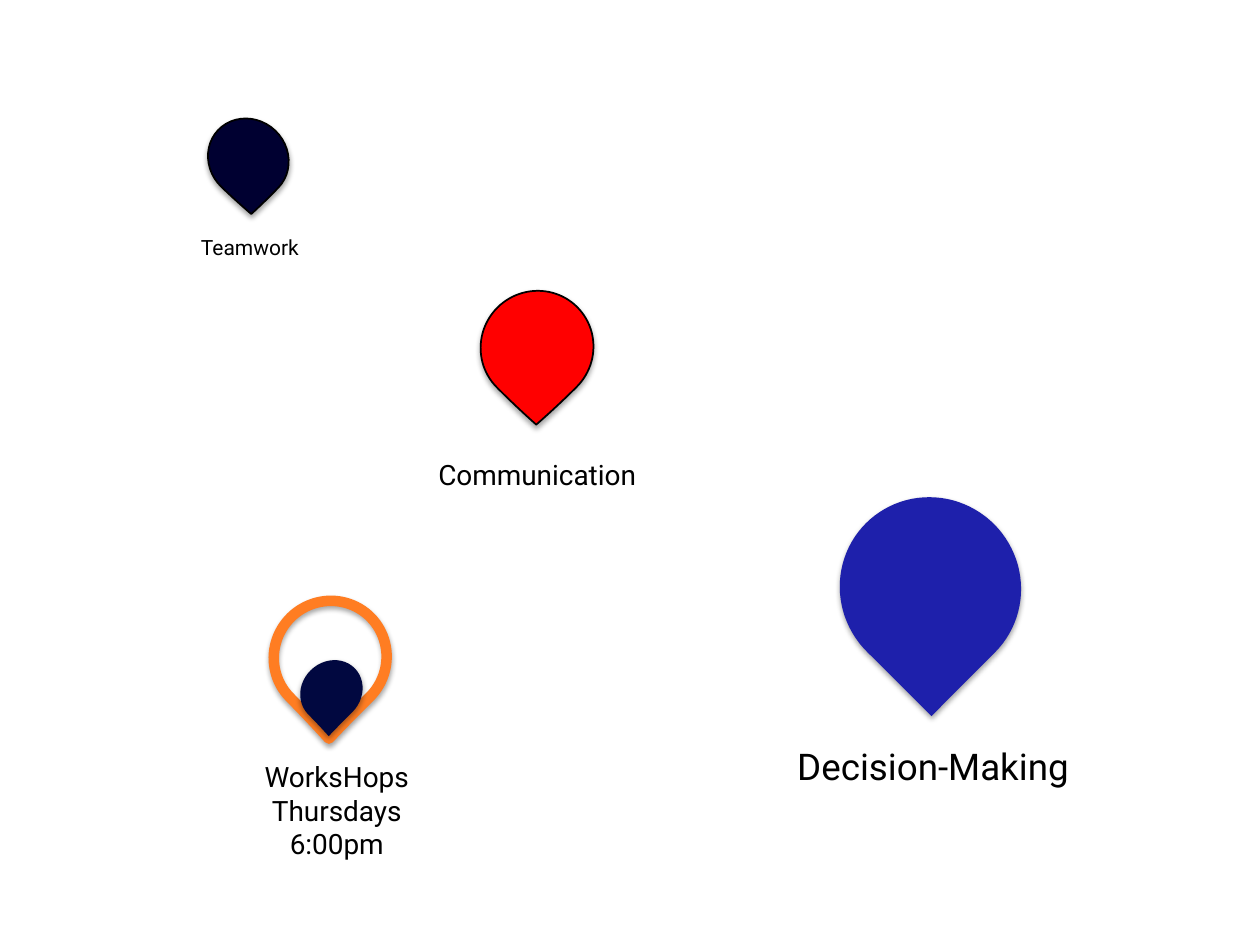
"""Build a slide of map-pin markers, each with a caption below it."""
from dataclasses import dataclass
from typing import Any, Optional

import pptx
import pptx.dml.color
import pptx.enum.shapes
import pptx.enum.text
import pptx.oxml
import pptx.oxml.ns
import pptx.util

Cm = pptx.util.Cm
Pt = pptx.util.Pt
RGBColor = pptx.dml.color.RGBColor

BLACK = RGBColor(0x00, 0x00, 0x00)
RED = RGBColor(0xFF, 0x00, 0x00)
BLUE = RGBColor(0x1E, 0x20, 0xAB)
MIDNIGHT = RGBColor(0x00, 0x00, 0x31)
NAVY = RGBColor(0x01, 0x08, 0x40)
ORANGE = RGBColor(0xFF, 0x7D, 0x22)

CAPTION_WIDTH = 11.86
SHADOW_XML = (
    f'<a:outerShdw {pptx.oxml.ns.nsdecls("a")} blurRad="{Pt(3.1)}" dist="{Pt(1.8)}" '
    'dir="5400000" algn="tl" rotWithShape="0"><a:srgbClr val="000000">'
    '<a:alpha val="35000"/></a:srgbClr></a:outerShdw>'
)


@dataclass(frozen=True)
class Pin:
    left: float
    top: float
    width: float
    height: float
    rotation: float
    point: float = 1.0
    fill: Optional[RGBColor] = None
    outline: Optional[RGBColor] = None
    outline_width: float = 1


@dataclass(frozen=True)
class Caption:
    text: str
    left: float
    top: float
    height: float
    size: float


TOPIC_PINS = (
    Pin(9.68, 5.87, 2.29, 2.26, 135.2, 0.97, RED, BLACK),
    Pin(16.94, 10.01, 3.63, 3.68, 134.9, fill=BLUE),
    Pin(4.22, 2.36, 1.57, 1.68, 133.9, 0.97, MIDNIGHT, BLACK),
)
WORKSHOP_PINS = (
    Pin(5.51, 12.12, 2.29, 2.26, 135.5, 1.02, outline=ORANGE, outline_width=6),
    Pin(6.02, 13.34, 1.32, 1.19, 135.5, 1.02, NAVY),
)
TOPIC_CAPTIONS = (
    Caption("Decision-Making", 12.88, 14.86, 1.14, 21),
    Caption("Communication", 4.9, 9.09, 0.94, 16),
    Caption("Teamwork", -0.89, 4.6, 0.76, 12),
)
WORKSHOP_CAPTION = Caption("WorksHops\nThursdays\n6:00pm", 0.86, 15.19, 2.39, 16)


def draw_pin(shapes: Any, pin: Pin) -> None:
    """Draw a teardrop turned point down, with a soft shadow below."""
    drop = shapes.add_shape(
        pptx.enum.shapes.MSO_SHAPE.TEAR,
        Cm(pin.left), Cm(pin.top), Cm(pin.width), Cm(pin.height),
    )
    drop.rotation = pin.rotation
    drop.adjustments[0] = pin.point
    if pin.fill is None:
        drop.fill.background()
    else:
        drop.fill.solid()
        drop.fill.fore_color.rgb = pin.fill
    if pin.outline is None:
        drop.line.fill.background()
    else:
        drop.line.color.rgb = pin.outline
        drop.line.width = Pt(pin.outline_width)
    drop.shadow.inherit = False
    effects = drop.element.spPr.find(pptx.oxml.ns.qn("a:effectLst"))
    effects.append(pptx.oxml.parse_xml(SHADOW_XML))


def write_text(frame: Any, text: str, *, size: float, font: str = "Roboto",
               color: RGBColor = BLACK) -> None:
    """Fill a frame with centred text, one paragraph a line."""
    frame.word_wrap = True
    frame.auto_size = pptx.enum.text.MSO_AUTO_SIZE.SHAPE_TO_FIT_TEXT
    frame.text = text
    for paragraph in frame.paragraphs:
        paragraph.alignment = pptx.enum.text.PP_ALIGN.CENTER
        for run in paragraph.runs:
            run.font.name = font
            run.font.size = Pt(size)
            run.font.color.rgb = color


def draw_caption(shapes: Any, caption: Caption) -> None:
    """Place a caption box."""
    box = shapes.add_textbox(
        Cm(caption.left), Cm(caption.top), Cm(CAPTION_WIDTH), Cm(caption.height)
    )
    write_text(box.text_frame, caption.text, size=caption.size)


def main() -> None:
    """Build and save the slide."""
    deck = pptx.Presentation()
    deck.slide_width, deck.slide_height = Cm(25.4), Cm(19.05)
    shapes = deck.slides.add_slide(deck.slide_layouts[6]).shapes
    for pin in TOPIC_PINS:
        draw_pin(shapes, pin)
    for caption in TOPIC_CAPTIONS:
        draw_caption(shapes, caption)
    workshop_marker = shapes.add_group_shape()
    for pin in WORKSHOP_PINS:
        draw_pin(workshop_marker.shapes, pin)
    draw_caption(shapes, WORKSHOP_CAPTION)
    deck.save("out.pptx")


if __name__ == "__main__":
    main()
